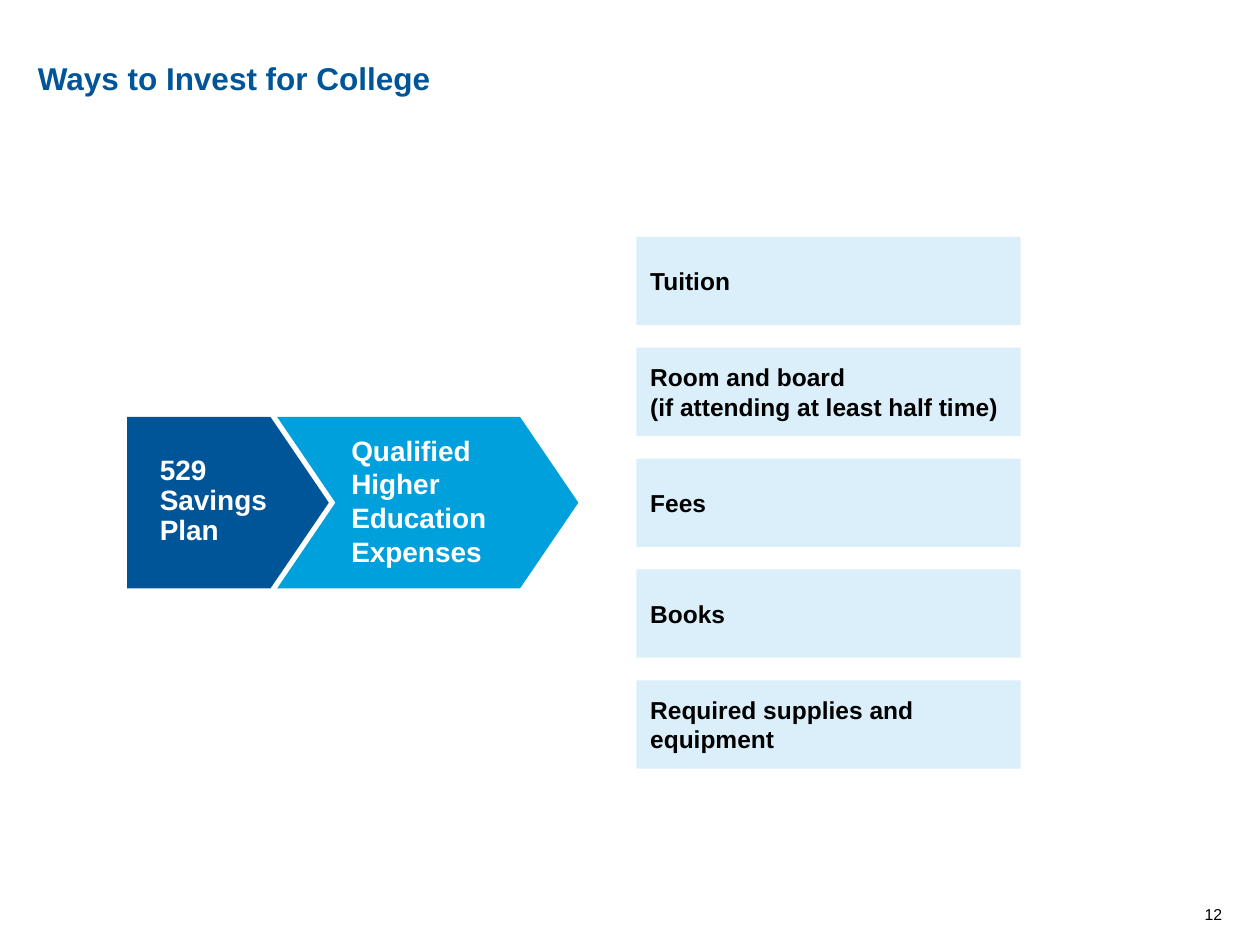
from pptx import Presentation
from pptx.dml.color import RGBColor
from pptx.enum.shapes import MSO_SHAPE
from pptx.enum.text import MSO_ANCHOR, PP_ALIGN
from pptx.util import Emu, Pt

EMU_PER_PX = 9144  # 100 px to the inch
NAVY, BLUE, PALE, WHITE, BLACK = "005598", "00A0DC", "DBEFFB", "FFFFFF", "000000"
EXPENSES = [
    ["Tuition"],
    ["Room and board", "(if attending at least half time)"],
    ["Fees"],
    ["Books"],
    ["Required supplies and equipment"],
]


def px(n):
    return Emu(n * EMU_PER_PX)


def color(hex_value):
    return RGBColor.from_string(hex_value)


def write(shape, lines, size, hex_value, bold=True, inset=(10, 5),
          anchor=MSO_ANCHOR.TOP, align=PP_ALIGN.LEFT, spacing=None):
    tf = shape.text_frame
    dx, dy = map(px, inset)
    frame = {"word_wrap": True, "vertical_anchor": anchor, "margin_left": dx,
             "margin_right": dx, "margin_top": dy, "margin_bottom": dy}
    for name, value in frame.items():
        setattr(tf, name, value)
    for i, line in enumerate(lines):
        p = tf.add_paragraph() if i else tf.paragraphs[0]
        p.alignment = align
        if spacing:
            p.line_spacing = spacing
        r = p.add_run()
        r.text = line
        for name, value in {"name": "Arial", "size": Pt(size), "bold": bold}.items():
            setattr(r.font, name, value)
        r.font.color.rgb = color(hex_value)


def add_block(s, kind, box, fill):
    sp = s.shapes.add_shape(kind, *map(px, box))
    sp.shadow.inherit = False
    sp.fill.solid()
    sp.fill.fore_color.rgb = color(fill)
    sp.line.fill.background()
    return sp


def add_text(s, box, lines, size, hex_value, **style):
    write(s.shapes.add_textbox(*map(px, box)), lines, size, hex_value, **style)


def add_title(s, box):
    title = s.shapes.title
    title.left, title.top, title.width, title.height = map(px, box)
    write(title, ["Ways to Invest for College"], 18, NAVY, inset=(0, 0))


def add_plan_arrows(s, x, y, w, h):
    """Draw the plan pentagon and the chevron that follows it."""
    plan_w, chevron_x = 160, 119
    arrows = [
        (MSO_SHAPE.CHEVRON, (x + chevron_x, y, w - chevron_x, h), BLUE),
        (MSO_SHAPE.PENTAGON, (x, y, plan_w, h), NAVY),
    ]
    for kind, box, fill in arrows:
        add_block(s, kind, box, fill).adjustments[0] = 0.34
    add_text(s, (x + 16, y + 26, 108, 83), ["529", "Savings", "Plan"],
             16, WHITE, spacing=0.9)
    add_text(s, (x + 168, y + 8, 133, 118),
             ["Qualified Higher Education", "Expenses"], 16, WHITE)


def add_expense_cards(s, x, y, w, h):
    card_h = 70
    step = (h - card_h) // (len(EXPENSES) - 1)
    for i, lines in enumerate(EXPENSES):
        card = add_block(s, MSO_SHAPE.RECTANGLE, (x, y + i * step, w, card_h), PALE)
        write(card, lines, 14, BLACK, inset=(11, 5), anchor=MSO_ANCHOR.MIDDLE)


def main():
    prs = Presentation()
    prs.slide_width, prs.slide_height = px(1000), px(750)
    s = prs.slides.add_slide(prs.slide_layouts[5])
    add_title(s, (30, 47, 700, 70))
    add_plan_arrows(s, 101, 331, 358, 136)
    add_expense_cards(s, 505, 188, 305, 422)
    add_text(s, (930, 715, 40, 18), ["12"], 9, BLACK, bold=False, inset=(0, 0),
             anchor=MSO_ANCHOR.BOTTOM, align=PP_ALIGN.RIGHT)
    prs.save("out.pptx")


if __name__ == "__main__":
    main()
